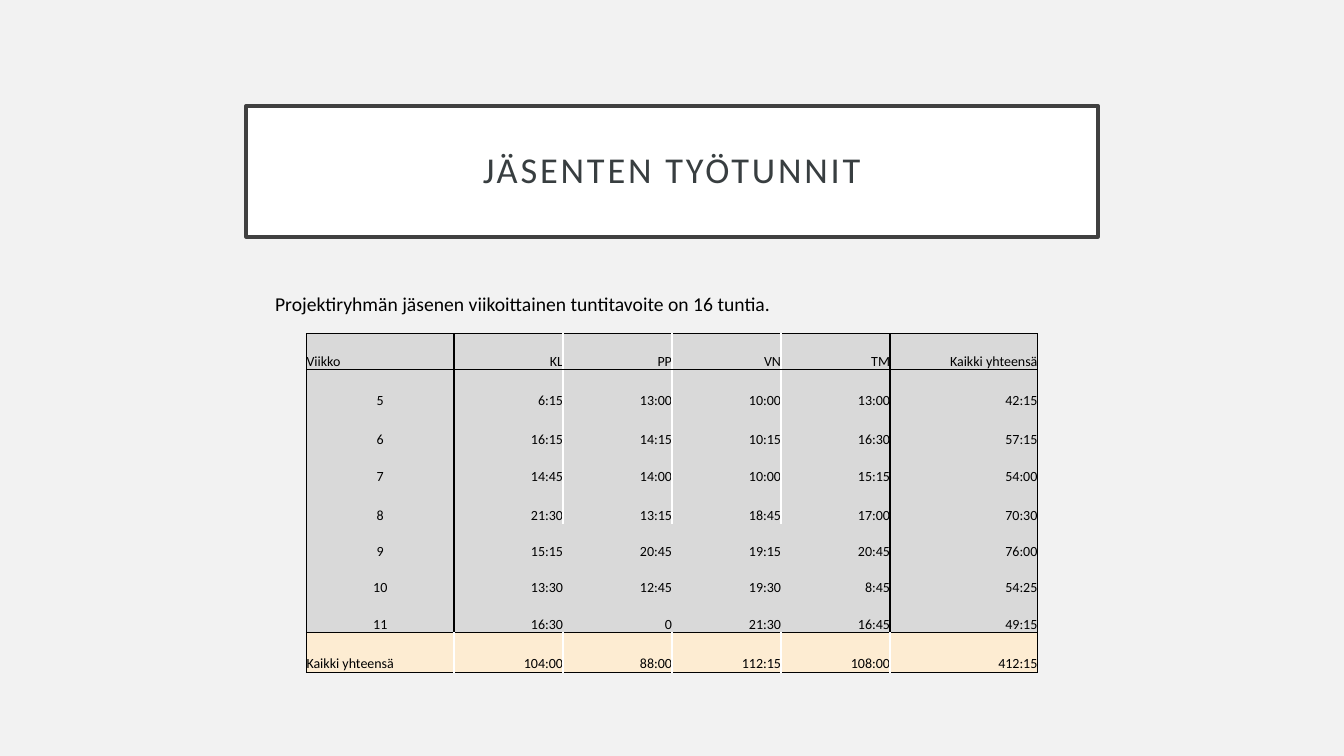
from lxml.etree import SubElement
from pptx import Presentation
from pptx.dml.color import RGBColor
from pptx.enum.shapes import MSO_SHAPE
from pptx.enum.text import MSO_ANCHOR, MSO_AUTO_SIZE, PP_ALIGN
from pptx.oxml.ns import qn
from pptx.util import Inches, Pt

BACKGROUND = RGBColor(0xF2, 0xF2, 0xF2)
WHITE = RGBColor(0xFF, 0xFF, 0xFF)
BLACK = RGBColor(0x00, 0x00, 0x00)
FRAME = RGBColor(0x40, 0x40, 0x40)
TITLE = RGBColor(0x38, 0x3E, 0x40)
GREY = RGBColor(0xD9, 0xD9, 0xD9)
CREAM = RGBColor(0xFD, 0xEC, 0xD2)

COLUMN_WIDTHS = [1.46, 1.08, 1.08, 1.08, 1.08, 1.46]
ROW_HEIGHTS = [0.36, 0.39, 0.39, 0.36, 0.39, 0.36, 0.36, 0.36, 0.39]
HOURS = [
    ["Viikko", "KL", "PP", "VN", "TM", "Kaikki yhteensä"],
    ["5", "6:15", "13:00", "10:00", "13:00", "42:15"],
    ["6", "16:15", "14:15", "10:15", "16:30", "57:15"],
    ["7", "14:45", "14:00", "10:00", "15:15", "54:00"],
    ["8", "21:30", "13:15", "18:45", "17:00", "70:30"],
    ["9", "15:15", "20:45", "19:15", "20:45", "76:00"],
    ["10", "13:30", "12:45", "19:30", "8:45", "54:25"],
    ["11", "16:30", "0", "21:30", "16:45", "49:15"],
    ["Kaikki yhteensä", "104:00", "88:00", "112:15", "108:00", "412:15"],
]
TOTAL_ROW = len(HOURS) - 1
LAST_RULED_WEEK = 4


def set_font(para, size, color):
    para.font.name = "Calibri"
    para.font.size = Pt(size)
    para.font.color.rgb = color


def add_title(page, left, top, width, height):
    box = page.shapes.add_shape(MSO_SHAPE.RECTANGLE, left, top, width, height)
    box.shadow.inherit = False
    box.fill.solid()
    box.fill.fore_color.rgb = WHITE
    box.line.color.rgb = FRAME
    box.line.width = Pt(2.5)
    frame = box.text_frame
    frame.word_wrap = True
    frame.vertical_anchor = MSO_ANCHOR.MIDDLE
    frame.margin_left = frame.margin_right = Inches(0.2)
    frame.margin_top = frame.margin_bottom = Inches(0.2)
    para = frame.paragraphs[0]
    para.alignment = PP_ALIGN.CENTER
    para.line_spacing = 0.9
    set_font(para, 26, TITLE)
    span = para.add_run()
    span.text = "JÄSENTEN TYÖTUNNIT"
    span.font._element.set("spc", "200")


def add_target(page, left, top, width, height):
    box = page.shapes.add_textbox(left, top, width, height)
    box.text_frame.word_wrap = True
    box.text_frame.auto_size = MSO_AUTO_SIZE.SHAPE_TO_FIT_TEXT
    para = box.text_frame.paragraphs[0]
    para.text = "Projektiryhmän jäsenen viikoittainen tuntitavoite on 16 tuntia."
    set_font(para, 14, BLACK)


def vertical_rule(row, edge):
    """Colour of the line at a column edge, or None."""
    if edge in (0, len(COLUMN_WIDTHS)):
        return BLACK
    if row == TOTAL_ROW:
        return WHITE
    if edge in (1, len(COLUMN_WIDTHS) - 1):
        return BLACK
    return WHITE if row <= LAST_RULED_WEEK else None


def horizontal_rule(edge):
    """Colour of the line at a row edge, or None."""
    return BLACK if edge in (0, 1, TOTAL_ROW, TOTAL_ROW + 1) else None


def add_border(cell, side, color):
    line = SubElement(cell._tc.get_or_add_tcPr(), qn(f"a:ln{side}"), w=str(Pt(1)))
    if color is None:
        SubElement(line, qn("a:noFill"))
    else:
        fill = SubElement(line, qn("a:solidFill"))
        SubElement(fill, qn("a:srgbClr"), val=str(color))


def cell_alignment(row, column):
    if column:
        return PP_ALIGN.RIGHT
    return PP_ALIGN.LEFT if row in (0, TOTAL_ROW) else PP_ALIGN.CENTER


def fill_cell(cell, row, column):
    cell.margin_left = cell.margin_right = 0
    cell.margin_top = cell.margin_bottom = 0
    cell.vertical_anchor = MSO_ANCHOR.BOTTOM
    add_border(cell, "L", vertical_rule(row, column))
    add_border(cell, "R", vertical_rule(row, column + 1))
    add_border(cell, "T", horizontal_rule(row))
    add_border(cell, "B", horizontal_rule(row + 1))
    cell.fill.solid()
    cell.fill.fore_color.rgb = CREAM if row == TOTAL_ROW else GREY
    para = cell.text_frame.paragraphs[0]
    para.text = HOURS[row][column]
    para.alignment = cell_alignment(row, column)
    set_font(para, 10, BLACK)


def add_hours(page, left, top, width, height):
    table = page.shapes.add_table(
        len(ROW_HEIGHTS), len(COLUMN_WIDTHS), left, top, width, height).table
    table.first_row = table.horz_banding = False
    for column, share in zip(table.columns, COLUMN_WIDTHS):
        column.width = int(width * share / sum(COLUMN_WIDTHS))
    for row, share in zip(table.rows, ROW_HEIGHTS):
        row.height = int(height * share / sum(ROW_HEIGHTS))
    for row in range(len(ROW_HEIGHTS)):
        for column in range(len(COLUMN_WIDTHS)):
            fill_cell(table.cell(row, column), row, column)


def main():
    deck = Presentation()
    deck.slide_width, deck.slide_height = Inches(13.33), Inches(7.5)
    page = deck.slides.add_slide(deck.slide_layouts[6])
    page.background.fill.solid()
    page.background.fill.fore_color.rgb = BACKGROUND
    add_title(page, Inches(2.44), Inches(1.05), Inches(8.45), Inches(1.3))
    add_target(page, Inches(2.63), Inches(2.85), Inches(7.59), Inches(0.34))
    add_hours(page, Inches(3.04), Inches(3.31), Inches(7.25), Inches(3.36))
    deck.save("out.pptx")


if __name__ == "__main__":
    main()
